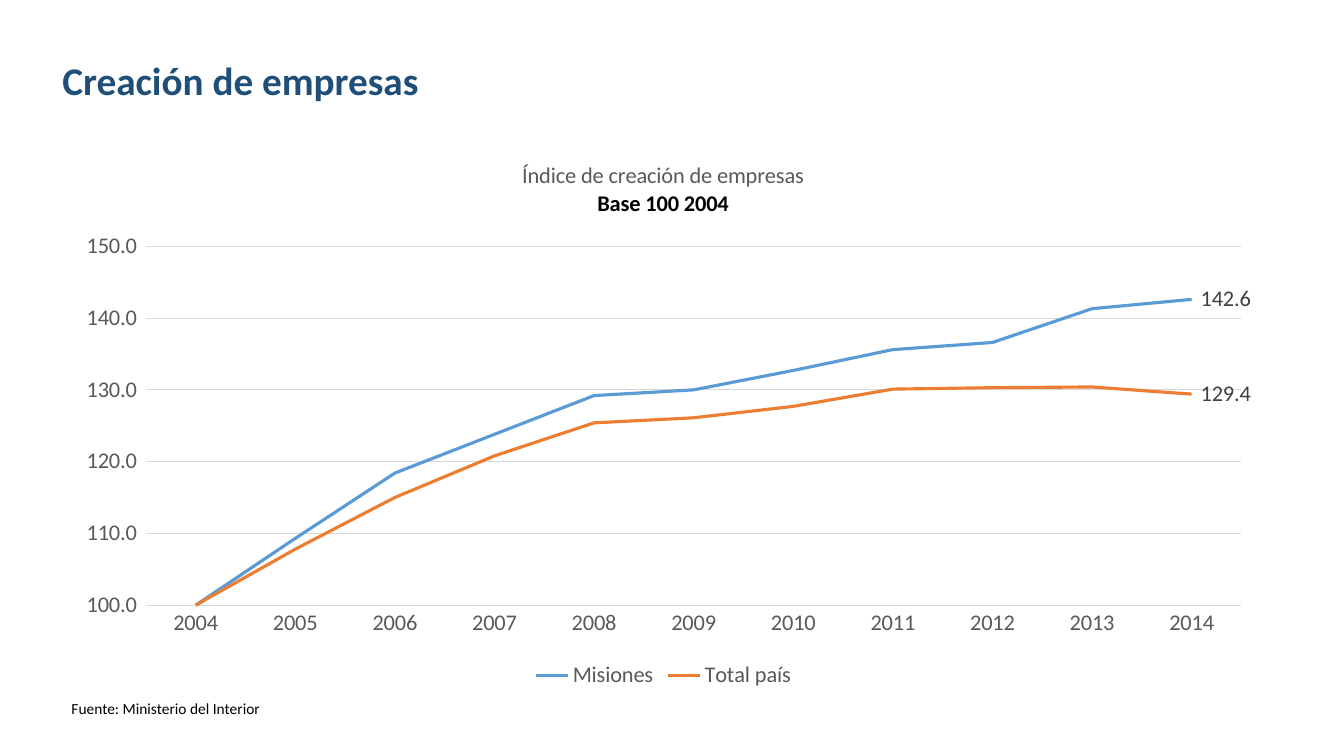
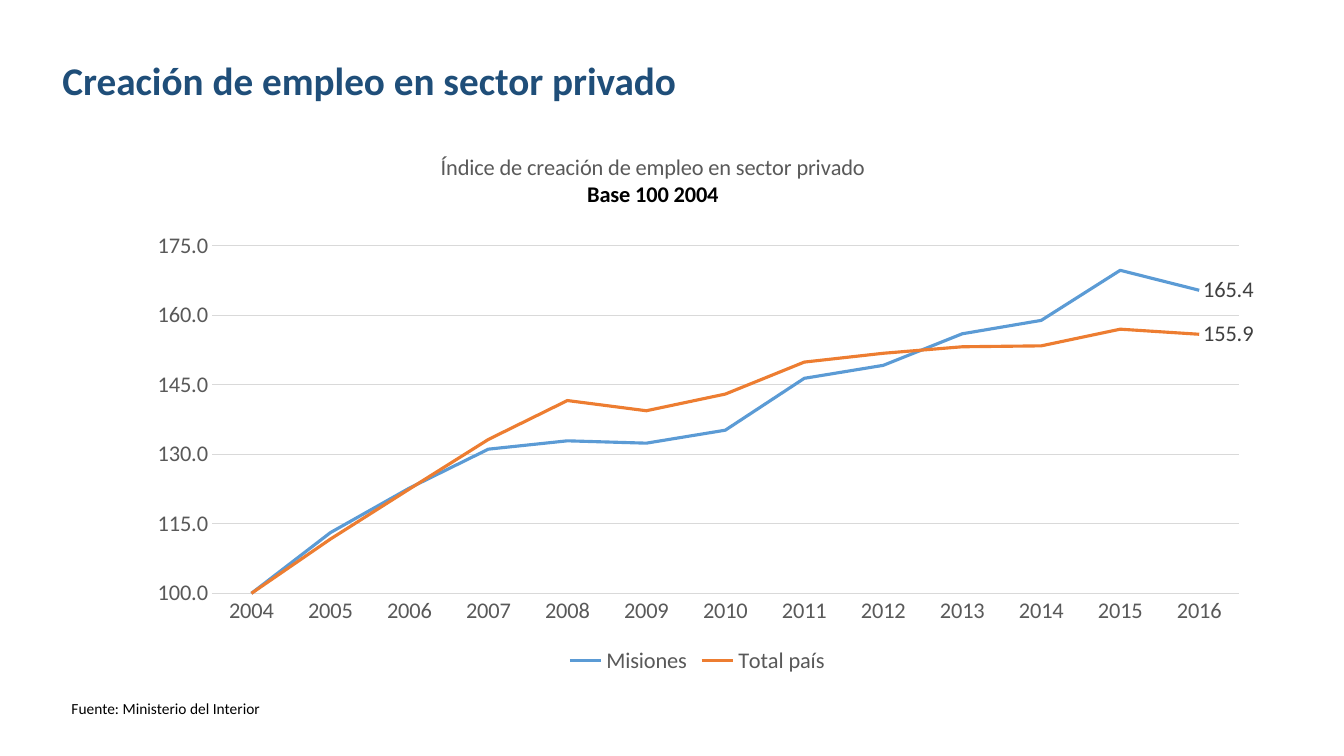
from dataclasses import dataclass

from lxml import etree
from pptx import Presentation
from pptx.chart.data import CategoryChartData
from pptx.dml.color import RGBColor
from pptx.enum.chart import XL_CHART_TYPE, XL_LABEL_POSITION, XL_LEGEND_POSITION, XL_TICK_MARK
from pptx.enum.text import MSO_ANCHOR, MSO_AUTO_SIZE
from pptx.oxml.ns import qn
from pptx.util import Pt

LINE = XL_CHART_TYPE.LINE
RIGHT = XL_LABEL_POSITION.RIGHT
BOTTOM = XL_LEGEND_POSITION.BOTTOM
NO_TICK = XL_TICK_MARK.NONE
ANCHOR_BOTTOM = MSO_ANCHOR.BOTTOM
ANCHOR_TOP = MSO_ANCHOR.TOP
GROW = MSO_AUTO_SIZE.SHAPE_TO_FIT_TEXT
NO_FIT = MSO_AUTO_SIZE.NONE

FONT = "Calibri"
NAVY, BLACK, GRAY, DARK, GRID = "1F4E79", "000000", "595959", "404040", "D9D9D9"
SERIES_COLORS = {"Misiones": "5B9BD5", "Total país": "ED7D31"}
BASE_LINE = "Base 100 2004"
SOURCE = "Fuente: Ministerio del Interior"
FIRST_YEAR = 2004


@dataclass
class TextStyle:
    box: tuple[float, float, float, float]
    size: float
    color: str
    bold: bool
    anchor: MSO_ANCHOR
    fit: MSO_AUTO_SIZE
    spacing: float


@dataclass
class IndexSlide:
    title: str
    chart_title: str
    box: tuple[float, float, float, float]
    title_at: tuple[float, float]
    plot_area: tuple[float, float, float, float]
    top: float
    step: float
    number_format: str
    values: tuple[list[float], list[float]]


TITLE = TextStyle((37.5, 15, 891, 63), 28, NAVY, True, ANCHOR_BOTTOM, NO_FIT, 0.9)
FOOTER = TextStyle((44, 495.5, 900, 21), 11, BLACK, False, ANCHOR_TOP, GROW, 1.0)

SLIDES = [
    IndexSlide(
        "Creación de empresas", "Índice de creación de empresas",
        (44, 101, 860, 394.5), (0.38, 0.03), (0.07, 0.19, 0.91, 0.65),
        150, 10, "_ #,##0.0_ ",
        ([100, 109.3, 118.4, 123.8, 129.2, 130, 132.7, 135.6, 136.6, 141.3, 142.6],
         [100, 107.8, 115, 120.8, 125.4, 126.1, 127.7, 130.1, 130.3, 130.4, 129.4]),
    ),
    IndexSlide(
        "Creación de empleo en sector privado", "Índice de creación de empleo en sector privado",
        (95, 103, 806, 382), (0.27, 0.01), (0.07, 0.19, 0.91, 0.65),
        175, 15, "0.0",
        ([100, 113.1, 122.7, 131.1, 132.9, 132.4, 135.2, 146.4, 149.2, 156, 158.9, 169.7, 165.4],
         [100, 111.7, 122.5, 133.2, 141.6, 139.4, 143, 149.9, 151.8, 153.2, 153.4, 157, 155.9]),
    ),
]


def rgb(value: str) -> RGBColor:
    return RGBColor.from_string(value)


def set_font(font, size: float, color: str, bold: bool = False) -> None:
    for name, value in {"name": FONT, "size": Pt(size), "bold": bold}.items():
        setattr(font, name, value)
    font.color.rgb = rgb(color)


def set_line(line, color: str, width: float) -> None:
    line.color.rgb = rgb(color)
    line.width = Pt(width)


def set_layout(parent, index: int, values: dict[str, str | float]) -> None:
    for old in parent.findall(qn("c:layout")):
        parent.remove(old)
    layout = etree.Element(qn("c:layout"))
    manual = etree.SubElement(layout, qn("c:manualLayout"))
    for name, value in values.items():
        etree.SubElement(manual, qn(f"c:{name}")).set("val", str(value))
    parent.insert(index, layout)


def add_text(s, text: str, style: TextStyle) -> None:
    tf = s.shapes.add_textbox(*map(Pt, style.box)).text_frame
    for name, value in {"word_wrap": True, "auto_size": style.fit,
                        "vertical_anchor": style.anchor}.items():
        setattr(tf, name, value)
    p = tf.paragraphs[0]
    p.line_spacing = style.spacing
    r = p.add_run()
    r.text = text
    set_font(r.font, style.size, style.color, style.bold)


def add_chart_title(chart, item: IndexSlide) -> None:
    tf = chart.chart_title.text_frame
    lines = [(item.chart_title, GRAY, False), (BASE_LINE, BLACK, True)]
    for i, (text, color, bold) in enumerate(lines):
        p = tf.add_paragraph() if i else tf.paragraphs[0]
        r = p.add_run()
        r.text = text
        set_font(r.font, 16, color, bold)
    x, y = item.title_at
    set_layout(chart.chart_title._element, 1,
               {"xMode": "edge", "yMode": "edge", "x": x, "y": y})


def format_axes(chart, item: IndexSlide) -> None:
    years, index = chart.category_axis, chart.value_axis
    for axis in (years, index):
        axis.major_tick_mark = axis.minor_tick_mark = NO_TICK
        set_font(axis.tick_labels.font, 16, GRAY)
    set_line(years.format.line, GRID, 0.75)
    index.format.line.fill.background()
    for name, value in {"minimum_scale": 100, "maximum_scale": item.top,
                        "major_unit": item.step, "has_major_gridlines": True}.items():
        setattr(index, name, value)
    set_line(index.major_gridlines.format.line, GRID, 0.75)
    index.tick_labels.number_format = item.number_format
    index.tick_labels.number_format_is_linked = False


def add_index_chart(s, item: IndexSlide) -> None:
    data = CategoryChartData(number_format=item.number_format)
    count = len(item.values[0])
    data.categories = [str(FIRST_YEAR + i) for i in range(count)]
    for name, values in zip(SERIES_COLORS, item.values):
        data.add_series(name, values)
    chart = s.shapes.add_chart(LINE, *map(Pt, item.box), data).chart
    set_font(chart.font, 16, BLACK)
    add_chart_title(chart, item)
    format_axes(chart, item)
    plot = chart.plots[0]
    plot.vary_by_categories = False
    for series, color in zip(plot.series, SERIES_COLORS.values()):
        series.smooth = False
        set_line(series.format.line, color, 2.25)
        series.data_labels.show_value = False
        label = series.points[count - 1].data_label
        set_font(label.font, 16, DARK)
        label.position = RIGHT
    chart.has_legend = True
    chart.legend.position = BOTTOM
    chart.legend.include_in_layout = False
    set_font(chart.legend.font, 16, GRAY)
    x, y, w, h = item.plot_area
    set_layout(chart._chartSpace.chart.plotArea, 0,
               {"layoutTarget": "inner", "xMode": "edge", "yMode": "edge",
                "x": x, "y": y, "w": w, "h": h})


def main() -> None:
    prs = Presentation()
    prs.slide_width, prs.slide_height = Pt(960), Pt(540)
    for item in SLIDES:
        s = prs.slides.add_slide(prs.slide_layouts[6])
        add_text(s, item.title, TITLE)
        add_text(s, SOURCE, FOOTER)
        add_index_chart(s, item)
    prs.save("out.pptx")


if __name__ == "__main__":
    main()
